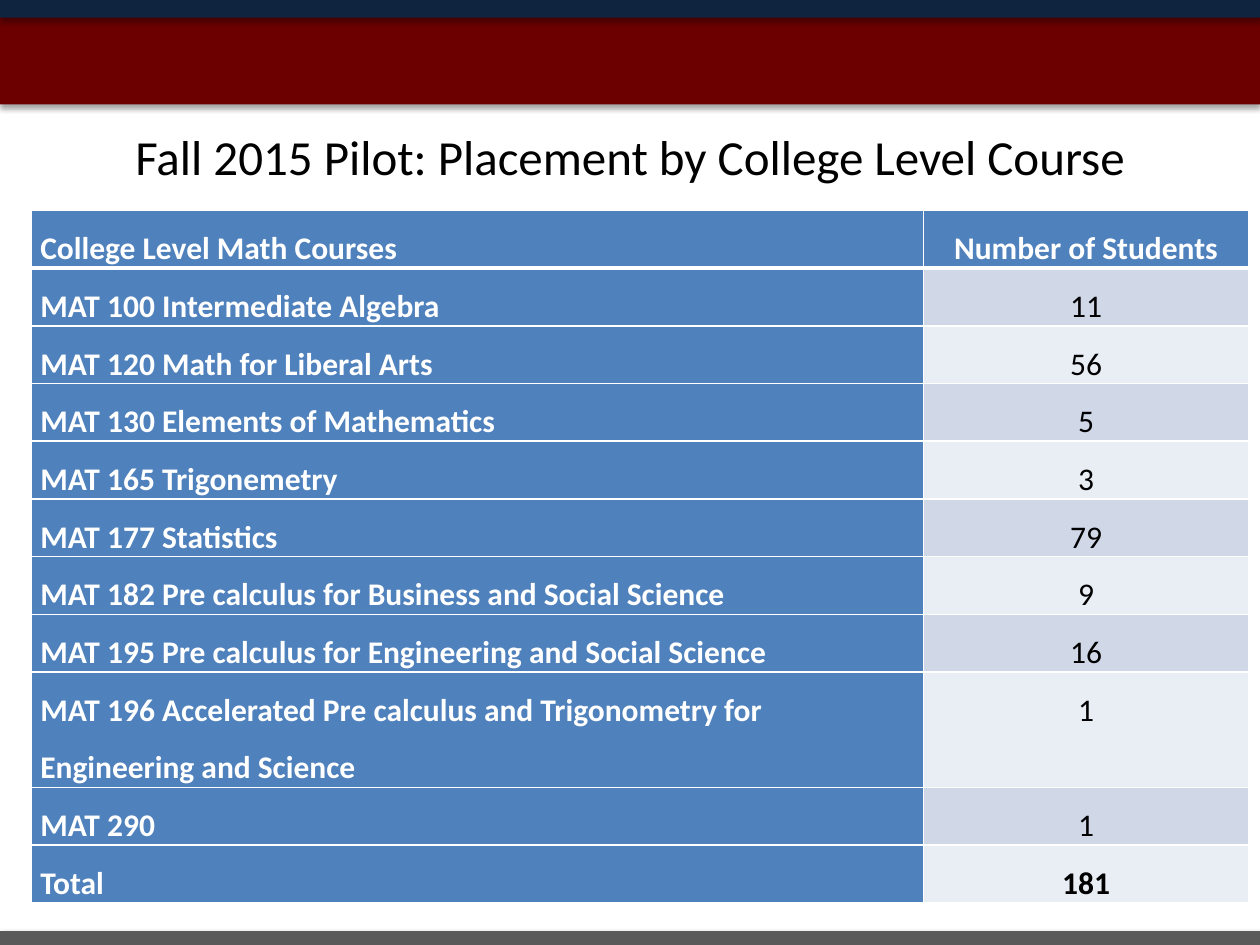
from lxml.etree import SubElement
from pptx import Presentation
from pptx.dml.color import RGBColor
from pptx.enum.shapes import MSO_SHAPE
from pptx.enum.text import MSO_ANCHOR, PP_ALIGN
from pptx.oxml.ns import qn
from pptx.util import Inches, Pt

COLORS = {"white": "FFFFFF", "black": "000000", "gray": "595959", "maroon": "6C0000",
          "navy": "0F243E", "blue": "4F81BD", "band_dark": "D0D8E8", "band_light": "E9EDF4"}
TITLE = "Fall 2015 Pilot: Placement by College Level Course"
ROWS = [
    ("College Level Math Courses", "Number of Students"),
    ("MAT 100 Intermediate Algebra", "11"),
    ("MAT 120 Math for Liberal Arts", "56"),
    ("MAT 130 Elements of Mathematics", "5"),
    ("MAT 165 Trigonemetry", "3"),
    ("MAT 177 Statistics", "79"),
    ("MAT 182 Pre calculus for Business and Social Science", "9"),
    ("MAT 195 Pre calculus for Engineering and Social Science", "16"),
    ("MAT 196 Accelerated Pre calculus and Trigonometry for Engineering and Science", "1"),
    ("MAT 290", "1"),
    ("Total", "181"),
]
# left, top, width, height, color, shadow (opacity %, blur pt, distance pt, angle)
BARS = [
    (-0.01, 7.39, 10.01, 0.22, "gray", (43, 4, 3, 45)),
    (0, 0, 10, 0.83, "maroon", (35, 3.1, 1.8, 90)),
    (0, -0.08, 10, 0.22, "navy", (35, 3.1, 1.8, 90)),
]
COLUMN_WIDTHS = (7.08, 2.58)
ROW_HEIGHT = 0.33


def rgb(name):
    return RGBColor.from_string(COLORS[name])


def style_font(font, size, color, bold=False):
    font.name, font.size, font.bold = "Calibri", Pt(size), bold
    font.color.rgb = rgb(color)


def add_bar(slide, left, top, width, height, color, shadow):
    bar = slide.shapes.add_shape(MSO_SHAPE.RECTANGLE, Inches(left), Inches(top),
                                 Inches(width), Inches(height))
    bar.fill.solid()
    bar.fill.fore_color.rgb = rgb(color)
    bar.line.fill.background()
    bar.shadow.inherit = False
    opacity, blur, distance, angle = shadow
    effects = bar._element.spPr.find(qn("a:effectLst"))
    outer = SubElement(effects, qn("a:outerShdw"), blurRad=str(Pt(blur)), dist=str(Pt(distance)),
                       dir=str(angle * 60000), algn="ctr", rotWithShape="0")
    shade = SubElement(outer, qn("a:srgbClr"), val=COLORS["black"])
    SubElement(shade, qn("a:alpha"), val=str(opacity * 1000))
    return bar


def add_borders(cell, bottom):
    properties = cell._tc.get_or_add_tcPr()
    for index, (side, width) in enumerate((("L", 1), ("R", 1), ("T", 1), ("B", bottom))):
        border = SubElement(properties, qn(f"a:ln{side}"), w=str(Pt(width)))
        fill = SubElement(border, qn("a:solidFill"))
        SubElement(fill, qn("a:srgbClr"), val=COLORS["white"])
        properties.insert(index, border)


def fill_cell(cell, text, row, column):
    header, total = row == 0, row == len(ROWS) - 1
    label = header or column == 0
    cell.margin_left = cell.margin_right = Inches(0.07)
    cell.margin_top = cell.margin_bottom = 0
    cell.fill.solid()
    cell.fill.fore_color.rgb = rgb("blue" if label else "band_dark" if row % 2 else "band_light")
    add_borders(cell, 3 if header else 1)
    cell.text_frame.text = text
    paragraph = cell.text_frame.paragraphs[0]
    paragraph.alignment = PP_ALIGN.CENTER if column else PP_ALIGN.LEFT
    paragraph.line_spacing = 1.5
    style_font(paragraph.runs[0].font, 18, "white" if label else "black", label or total)


def main():
    """Build the college level course placement slide."""
    deck = Presentation()
    deck.slide_width, deck.slide_height = Inches(10), Inches(7.5)
    slide = deck.slides.add_slide(deck.slide_layouts[5])
    title = slide.shapes.title
    for bar in BARS:
        title._element.addprevious(add_bar(slide, *bar)._element)

    title.left, title.top, title.width, title.height = map(Inches, (0.5, 0.92, 9, 0.63))
    title.text_frame.text = TITLE
    title.text_frame.vertical_anchor = MSO_ANCHOR.MIDDLE
    heading = title.text_frame.paragraphs[0]
    heading.alignment = PP_ALIGN.CENTER
    style_font(heading.runs[0].font, 28, "black")

    placements = slide.shapes.add_table(
        len(ROWS), len(COLUMN_WIDTHS), Inches(0.25), Inches(1.67),
        Inches(sum(COLUMN_WIDTHS)), Inches(ROW_HEIGHT * len(ROWS))).table
    for column, width in zip(placements.columns, COLUMN_WIDTHS):
        column.width = Inches(width)
    for row, texts in enumerate(ROWS):
        for column, text in enumerate(texts):
            fill_cell(placements.cell(row, column), text, row, column)
    deck.save("out.pptx")


if __name__ == "__main__":
    main()
